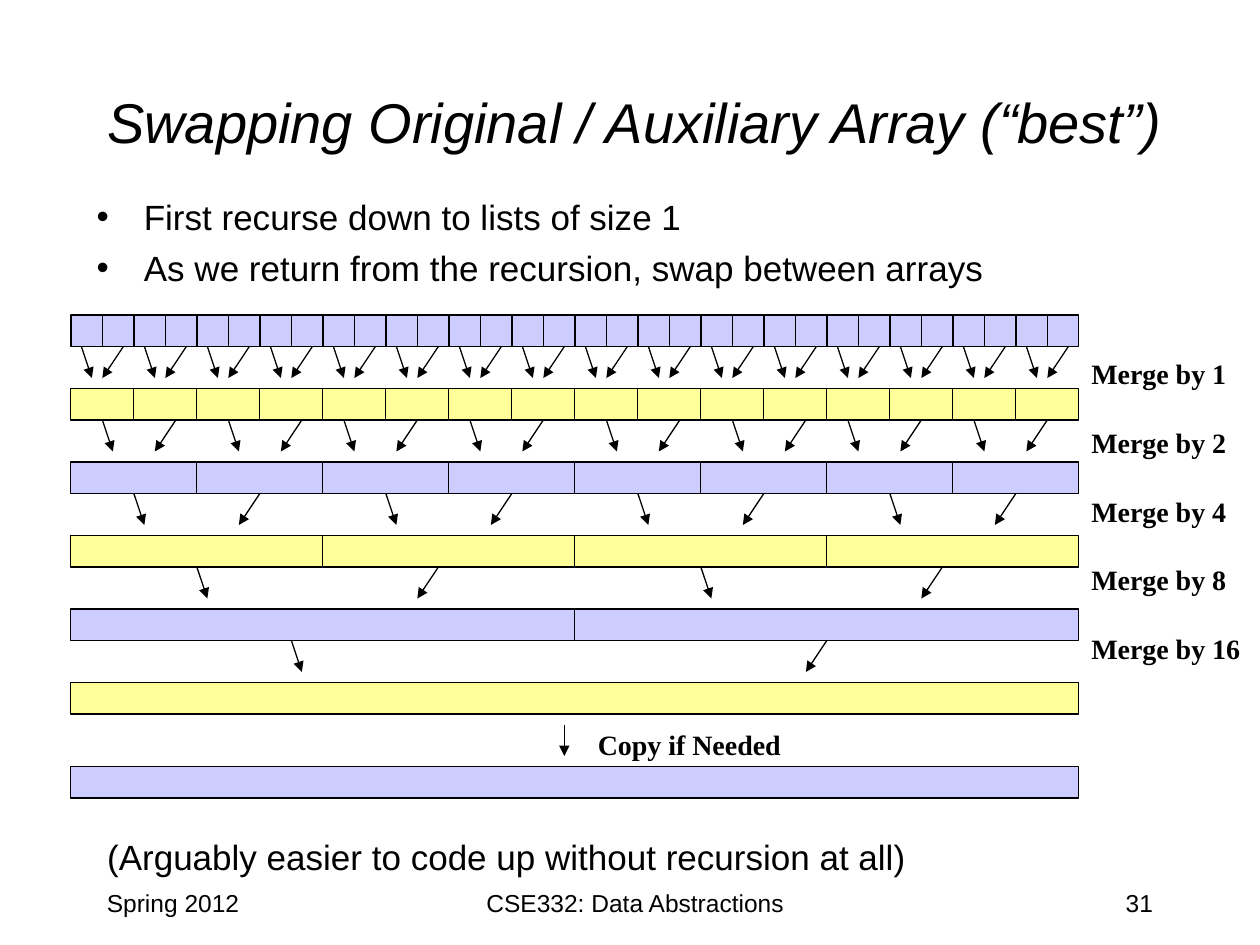
"""Builds a slide that shows bottom-up merging between two swapped arrays."""
from itertools import cycle

from lxml.etree import SubElement
from pptx import Presentation
from pptx.dml.color import RGBColor
from pptx.enum.shapes import MSO_CONNECTOR as Connector, MSO_SHAPE as Shape
from pptx.enum.text import MSO_ANCHOR as Anchor, MSO_AUTO_SIZE as AutoSize, PP_ALIGN as Align
from pptx.oxml.ns import qn
from pptx.util import Emu, Pt

BLACK = RGBColor(0x00, 0x00, 0x00)
LAVENDER = RGBColor(0xCC, 0xCC, 0xFF)
YELLOW = RGBColor(0xFF, 0xFF, 0x99)

LEFT, TOP, TOTAL_WIDTH = 54, 240, 768
CELL, ROW_PITCH = 24, 56
ARROW_STARTS = [
    [(8, 40)],
    [(24, 80), (24, 80), (16, 72), (16, 72)],
    [(48, 144)],
    [(96, 280)],
    [(168, 576)],
]


def px(length):
    return Emu(length * 9525)


class MergeSlide:
    sans, serif = "Arial", "Times New Roman"
    line_width = Pt(0.75)

    def __init__(self, presentation):
        self.slide = presentation.slides.add_slide(presentation.slide_layouts[3])

    def place(self, shape, box):
        shape.left, shape.top, shape.width, shape.height = map(px, box)

    def fill_text(self, shape, lines, size, font=None, bold=False, italic=False, align=Align.LEFT):
        frame = shape.text_frame
        frame.text = "\n".join(lines)
        frame.auto_size = AutoSize.NONE
        for paragraph in frame.paragraphs:
            paragraph.alignment = align
            for run in paragraph.runs:
                run.font.name = font or self.sans
                run.font.size = Pt(size)
                run.font.bold = bold
                run.font.italic = italic
                run.font.color.rgb = BLACK
        return frame

    def title(self, box, text):
        shape = self.slide.shapes.title
        self.place(shape, box)
        self.fill_text(shape, [text], 32, italic=True).vertical_anchor = Anchor.MIDDLE

    def body(self, index, box, lines, bullet):
        shape = self.slide.placeholders[index]
        self.place(shape, box)
        for paragraph in self.fill_text(shape, lines, 20).paragraphs:
            paragraph.space_before = Pt(5)
            properties = paragraph._p.get_or_add_pPr()
            properties.set("marL", str(px(36)))
            properties.set("indent", str(px(-36)))
            if bullet:
                SubElement(properties, qn("a:buChar")).set("char", "•")
            else:
                SubElement(properties, qn("a:buNone"))

    def footer(self, box, text, align):
        shape = self.slide.shapes.add_textbox(*map(px, box))
        self.fill_text(shape, [text], 14, align=align).word_wrap = True

    def label(self, box, lines, margin_top=5):
        shape = self.slide.shapes.add_textbox(*map(px, box))
        frame = self.fill_text(shape, lines, 16, font=self.serif, bold=True)
        frame.word_wrap = False
        frame.margin_top = px(margin_top)
        for paragraph in frame.paragraphs[:-1]:
            paragraph.space_after = Pt(20)

    def cell(self, left, top, width, color):
        shape = self.slide.shapes.add_shape(Shape.RECTANGLE, *map(px, (left, top, width, CELL)))
        shape.shadow.inherit = False
        shape.fill.solid()
        shape.fill.fore_color.rgb = color
        shape.line.color.rgb = BLACK
        shape.line.width = self.line_width
        return shape

    def row(self, top, width, color):
        return [self.cell(left, top, width, color)
                for left in range(LEFT, LEFT + TOTAL_WIDTH, width)]

    def arrow(self, start, top, shift, source=None):
        connector = self.slide.shapes.add_connector(
            Connector.STRAIGHT, *map(px, (start, top, start + shift, top + CELL)))
        connector.line.color.rgb = BLACK
        connector.line.width = self.line_width
        properties = connector._element.spPr
        SubElement(properties.find(qn("a:ln")), qn("a:tailEnd")).set("type", "triangle")
        SubElement(properties, qn("a:effectLst"))
        if source and source.left + source.width // 2 == px(start):
            connector.begin_connect(source, 2)

    def merge_arrows(self, cells, top, width, starts):
        for pair, offsets in zip(range(0, len(cells), 2), cycle(starts)):
            for source, offset, shift in zip(cells[pair:pair + 2], offsets, (8, -16)):
                self.arrow(LEFT + pair * width + offset, top + CELL, shift, source)


def main():
    presentation = Presentation()
    presentation.slide_width, presentation.slide_height = px(960), px(720)
    page = MergeSlide(presentation)

    page.title((72, 32, 840, 120), "Swapping Original / Auxiliary Array (“best”)")
    page.body(1, (64, 144, 816, 88), [
        "First recurse down to lists of size 1",
        "As we return from the recursion, swap between arrays",
    ], bullet=True)
    page.body(2, (72, 632, 816, 40),
              ["(Arguably easier to code up without recursion at all)"], bullet=False)
    page.footer((72, 672, 200, 48), "Spring 2012", Align.LEFT)
    page.footer((304, 672, 360, 48), "CSE332: Data Abstractions", Align.CENTER)
    page.footer((688, 672, 200, 48), "31", Align.RIGHT)

    for level, starts in enumerate(ARROW_STARTS):
        top, width = TOP + level * ROW_PITCH, CELL * 2 ** level
        cells = page.row(top, width, YELLOW if level % 2 else LAVENDER)
        page.merge_arrows(cells, top, width, starts)

    page.row(520, TOTAL_WIDTH, YELLOW)
    page.arrow(430, 552, 0)
    page.row(584, TOTAL_WIDTH, LAVENDER)
    page.label((446, 549, 168, 36), ["Copy if Needed"])
    page.label((822, 264, 138, 266),
               [f"Merge by {2 ** level}" for level in range(len(ARROW_STARTS))], margin_top=8)

    presentation.save("out.pptx")


if __name__ == "__main__":
    main()
